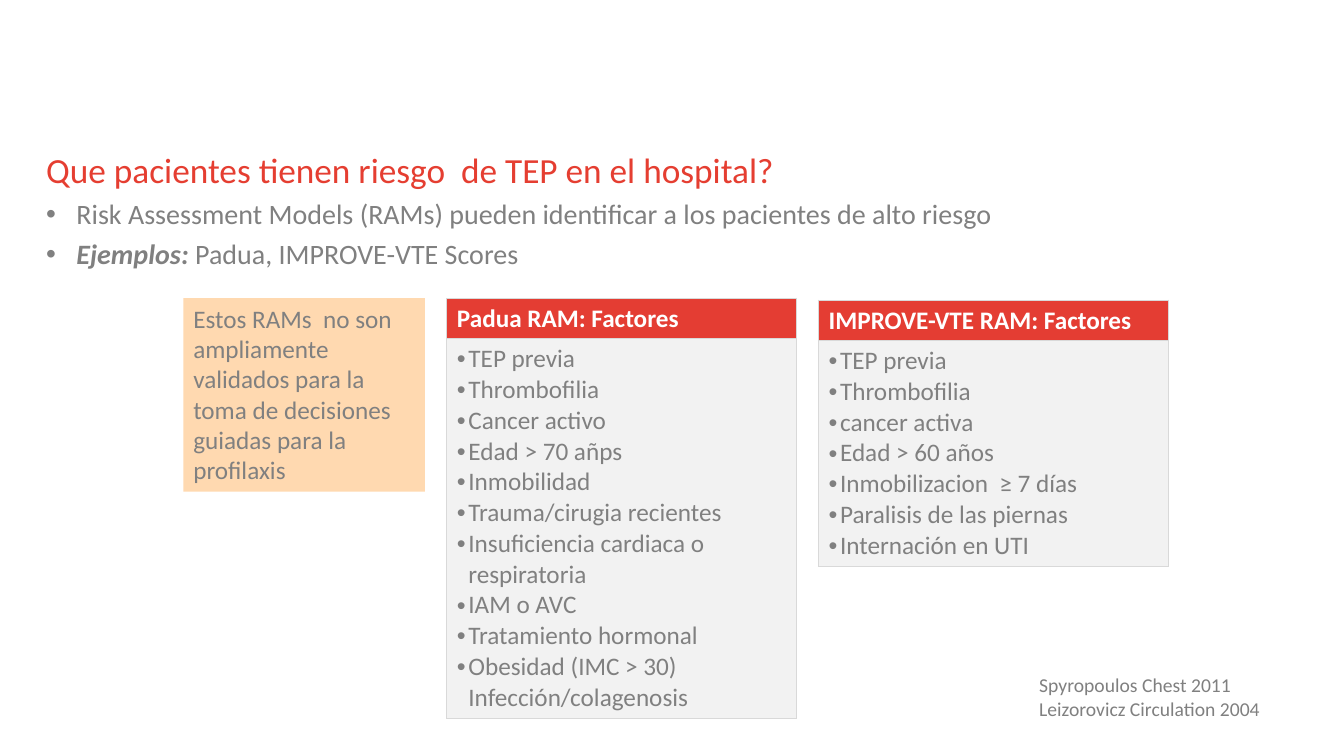
from dataclasses import dataclass

from lxml import etree
from pptx import Presentation
from pptx.dml.color import RGBColor
from pptx.enum.shapes import MSO_SHAPE
from pptx.enum.text import MSO_ANCHOR, PP_ALIGN
from pptx.oxml.ns import qn
from pptx.util import Pt

RECTANGLE = MSO_SHAPE.RECTANGLE
TOP = MSO_ANCHOR.TOP
LEFT = PP_ALIGN.LEFT

TITLE_RED = RGBColor(0xE5, 0x3E, 0x31)
HEADER_RED = RGBColor(0xE4, 0x3D, 0x33)
GRAY = RGBColor(0x80, 0x80, 0x80)
LIGHT_GRAY = RGBColor(0xF2, 0xF2, 0xF2)
BORDER_GRAY = RGBColor(0xD9, 0xD9, 0xD9)
PEACH = RGBColor(0xFF, 0xD9, 0xB0)
WHITE = RGBColor(0xFF, 0xFF, 0xFF)

FONT = "Calibri"
TABLE_WIDTH = 250
HEADER_HEIGHT = 28.8
LINE_HEIGHT = 22
CELL_PADDING = 7.2


@dataclass
class FactorTable:
    left: float
    top: float
    header: str
    factors: list[str]
    lines: int


@dataclass
class Run:
    text: str
    bold: bool = False
    italic: bool = False


FACTOR_TABLES = [
    FactorTable(319.2, 213.2, "Padua RAM: Factores", [
        "TEP previa",
        "Thrombofilia",
        "Cancer activo",
        "Edad > 70 añps",
        "Inmobilidad",
        "Trauma/cirugia recientes",
        "Insuficiencia cardiaca o respiratoria",
        "IAM o AVC",
        "Tratamiento hormonal",
        "Obesidad (IMC > 30) Infección/colagenosis",
    ], 12),
    FactorTable(584.7, 214.5, "IMPROVE-VTE RAM: Factores", [
        "TEP previa",
        "Thrombofilia",
        "cancer activa",
        "Edad > 60 años",
        "Inmobilizacion  ≥ 7 días",
        "Paralisis de las piernas",
        "Internación en UTI",
    ], 7),
]
INTRODUCTION = [
    [Run("Risk Assessment Models (RAMs) pueden identificar a los pacientes de alto riesgo")],
    [Run("Ejemplos:", bold=True, italic=True), Run(" Padua, IMPROVE-VTE Scores")],
]
NOTE = ("Estos RAMs  no son ampliamente validados para la toma de decisiones "
        "guiadas para la profilaxis")
REFERENCES = ["Spyropoulos Chest 2011", "Leizorovicz Circulation 2004"]


def plain(lines: list[str], bold: bool = False) -> list[list[Run]]:
    return [[Run(line, bold)] for line in lines]


def add_bullet(paragraph, indent: float) -> None:
    properties = paragraph._p.get_or_add_pPr()
    properties.set("marL", str(Pt(indent)))
    properties.set("indent", str(-Pt(indent)))
    etree.SubElement(properties, qn("a:buFont")).set("typeface", "Arial")
    etree.SubElement(properties, qn("a:buChar")).set("char", "•")


def write_text(frame, paragraphs: list[list[Run]], size: float, color: RGBColor,
               indent: float = 0, gap: float = 0) -> None:
    for index, runs in enumerate(paragraphs):
        paragraph = frame.paragraphs[0] if index == 0 else frame.add_paragraph()
        if indent:
            add_bullet(paragraph, indent)
        paragraph.alignment = LEFT
        paragraph.space_before = Pt(gap if index else 0)
        for item in runs:
            run = paragraph.add_run()
            run.text = item.text
            values = {"name": FONT, "size": Pt(size), "bold": item.bold, "italic": item.italic}
            for name, value in values.items():
                setattr(run.font, name, value)
            run.font.color.rgb = color


def set_frame(frame, margin: float | None = None) -> None:
    values = {"word_wrap": True, "vertical_anchor": TOP}
    if margin is not None:
        sides = ("left", "top", "right", "bottom")
        values |= {f"margin_{side}": Pt(margin) for side in sides}
    for name, value in values.items():
        setattr(frame, name, value)


def add_borders(cell) -> None:
    properties = cell._tc.get_or_add_tcPr()
    for side in ("lnL", "lnR", "lnT", "lnB"):
        line = etree.SubElement(properties, qn(f"a:{side}"), w=str(Pt(1)))
        fill = etree.SubElement(line, qn("a:solidFill"))
        etree.SubElement(fill, qn("a:srgbClr"), val=str(BORDER_GRAY))


def add_factor_table(slide, item: FactorTable) -> None:
    body_height = item.lines * LINE_HEIGHT + CELL_PADDING
    table = slide.shapes.add_table(
        2, 1, Pt(item.left), Pt(item.top), Pt(TABLE_WIDTH),
        Pt(HEADER_HEIGHT + body_height)).table
    table.horz_banding = False
    rows = [
        (HEADER_HEIGHT, HEADER_RED, WHITE, plain([item.header], bold=True), 0),
        (body_height, LIGHT_GRAY, GRAY, plain(item.factors), 8.2),
    ]
    for index, (height, fill, color, paragraphs, indent) in enumerate(rows):
        table.rows[index].height = Pt(height)
        cell = table.cell(index, 0)
        add_borders(cell)
        cell.fill.solid()
        cell.fill.fore_color.rgb = fill
        write_text(cell.text_frame, paragraphs, 18, color, indent)


def add_text_box(slide, left: float, top: float, width: float, height: float):
    shape = slide.shapes.add_textbox(Pt(left), Pt(top), Pt(width), Pt(height))
    return shape.text_frame


def main() -> None:
    presentation = Presentation()
    presentation.slide_width, presentation.slide_height = Pt(960), Pt(540)
    slide = presentation.slides.add_slide(presentation.slide_layouts[5])

    # Title
    title = slide.shapes.title
    position = {"left": 33, "top": 106, "width": 864, "height": 33}
    for name, value in position.items():
        setattr(title, name, Pt(value))
    set_frame(title.text_frame, margin=0)
    write_text(title.text_frame,
               plain(["Que pacientes tienen riesgo  de TEP en el hospital?"]),
               25.2, TITLE_RED)

    # Introduction
    introduction = add_text_box(slide, 33, 140.5, 864, 56)
    set_frame(introduction, margin=0)
    write_text(introduction, INTRODUCTION, 20, GRAY, indent=21.6, gap=4.5)

    # Risk factor tables
    for item in FACTOR_TABLES:
        add_factor_table(slide, item)

    # Validation note
    note = slide.shapes.add_shape(RECTANGLE, Pt(131), Pt(213), Pt(172.6), Pt(138.2))
    note.shadow.inherit = False
    note.fill.solid()
    note.fill.fore_color.rgb = PEACH
    note.line.fill.background()
    set_frame(note.text_frame)
    write_text(note.text_frame, plain([NOTE]), 18, GRAY)

    # References
    references = add_text_box(slide, 735.2, 477.2, 179, 41)
    set_frame(references)
    write_text(references, plain(REFERENCES), 14, GRAY)

    presentation.save("out.pptx")


if __name__ == "__main__":
    main()
